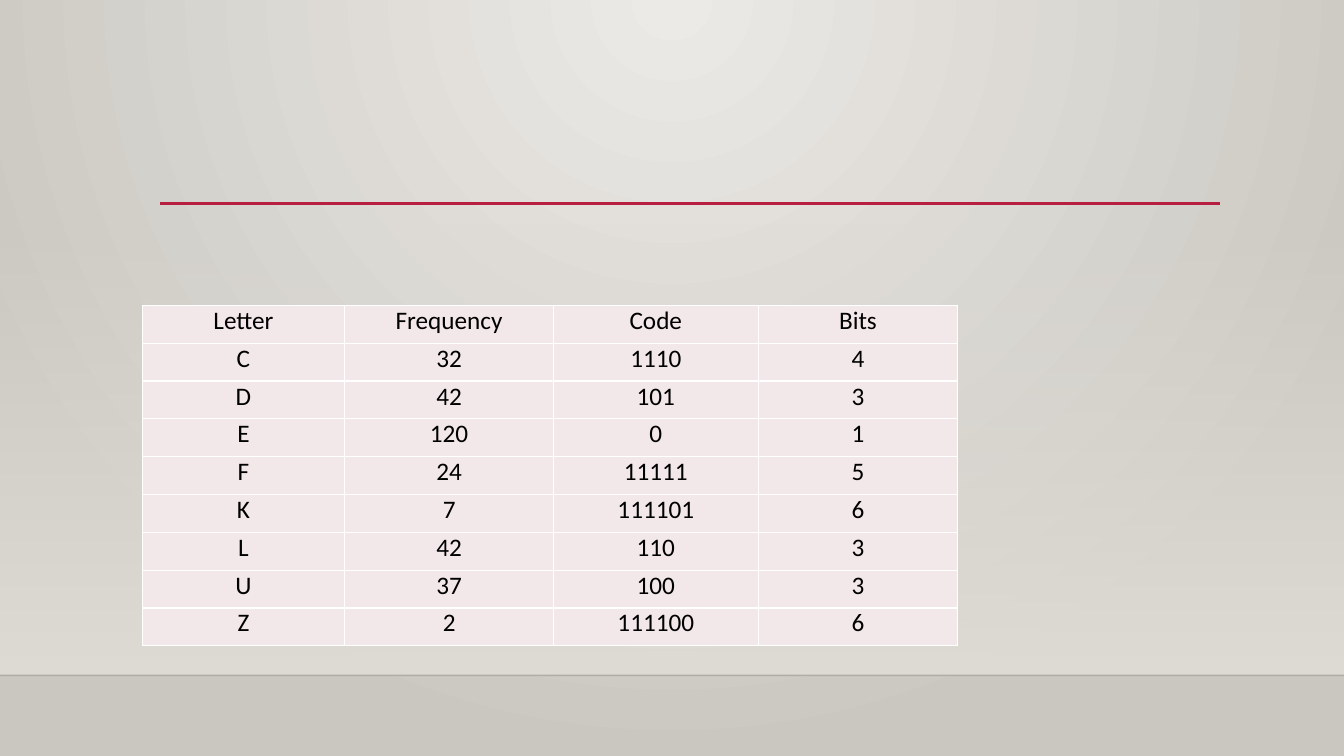
import pptx
import pptx.dml.color
import pptx.enum.shapes
import pptx.enum.text
import pptx.oxml
import pptx.oxml.ns
import pptx.util
from pptx.util import Inches

qn = pptx.oxml.ns.qn
namespace = pptx.oxml.ns.nsdecls("a")


def rgb(value):
    return pptx.dml.color.RGBColor.from_string(value)


def add_rule(slide, left, right, top, color, width):
    rule = slide.shapes.add_connector(
        pptx.enum.shapes.MSO_CONNECTOR.STRAIGHT,
        Inches(left), Inches(top), Inches(right), Inches(top))
    rule.line.color.rgb = rgb(color)
    rule.line.width = pptx.util.Pt(width)
    rule.element.spPr.append(pptx.oxml.parse_xml(f"<a:effectLst {namespace}/>"))
    return rule


presentation = pptx.Presentation()
presentation.slide_width = Inches(13.33)
presentation.slide_height = Inches(7.5)
slide = presentation.slides.add_slide(presentation.slide_layouts[6])

background = slide.background.fill
background.gradient()
for stop, color in zip(background.gradient_stops, ["ECEAE7", "CAC7C1"]):
    stop.color.rgb = rgb(color)
linear = slide.element.find(".//" + qn("a:lin"))
linear.getparent().replace(linear, pptx.oxml.parse_xml(
    f'<a:path {namespace} path="circle">'
    '<a:fillToRect l="43000" t="0" r="43000" b="100000"/></a:path>'))

wall = slide.shapes.add_shape(
    pptx.enum.shapes.MSO_SHAPE.RECTANGLE,
    Inches(0), Inches(2.21), Inches(13.33), Inches(4.49))
wall.shadow.inherit = False
wall.line.fill.background()
wall.fill.gradient()
wall.fill.gradient_angle = 270
for stop in wall.fill.gradient_stops:
    stop.color.rgb = rgb("DFDBD5")
wall.element.find(".//" + qn("a:srgbClr")).append(
    pptx.oxml.parse_xml(f'<a:alpha {namespace} val="0"/>'))

floor_edge = add_rule(slide, 0, 13.33, 6.7, "000001", 1)
floor_edge.element.find(".//" + qn("a:srgbClr")).append(
    pptx.oxml.parse_xml(f'<a:alpha {namespace} val="20000"/>'))
add_rule(slide, 1.59, 12.1, 2.02, "B71E42", 2.5)

rows = [
    ["Letter", "Frequency", "Code", "Bits"],
    ["C", "32", "1110", "4"],
    ["D", "42", "101", "3"],
    ["E", "120", "0", "1"],
    ["F", "24", "11111", "5"],
    ["K", "7", "111101", "6"],
    ["L", "42", "110", "3"],
    ["U", "37", "100", "3"],
    ["Z", "2", "111100", "6"],
]
column_widths = [2.01, 2.07, 2.03, 1.98]
table = slide.shapes.add_table(
    len(rows), len(column_widths),
    Inches(1.41), Inches(3.03), Inches(8.09), Inches(3.38)).table
table.first_row = False
table.horz_banding = False
for column, width in zip(table.columns, column_widths):
    column.width = Inches(width)

for row_index, row in enumerate(rows):
    for column_index, text in enumerate(row):
        cell = table.cell(row_index, column_index)
        cell.margin_left = cell.margin_right = Inches(0.07)
        cell.margin_top = cell.margin_bottom = 0
        properties = cell._tc.get_or_add_tcPr()
        for side in ["lnL", "lnR", "lnT", "lnB"]:
            properties.append(pptx.oxml.parse_xml(
                f'<a:{side} {namespace} w="12700"><a:solidFill>'
                f'<a:srgbClr val="FFFFFF"/></a:solidFill></a:{side}>'))
        cell.fill.solid()
        cell.fill.fore_color.rgb = rgb("F3E8E9")
        paragraph = cell.text_frame.paragraphs[0]
        paragraph.alignment = pptx.enum.text.PP_ALIGN.CENTER
        run = paragraph.add_run()
        run.text = text
        run.font.name = "Calibri"
        run.font.size = pptx.util.Pt(18)
        run.font.color.rgb = rgb("000000")

presentation.save("out.pptx")
